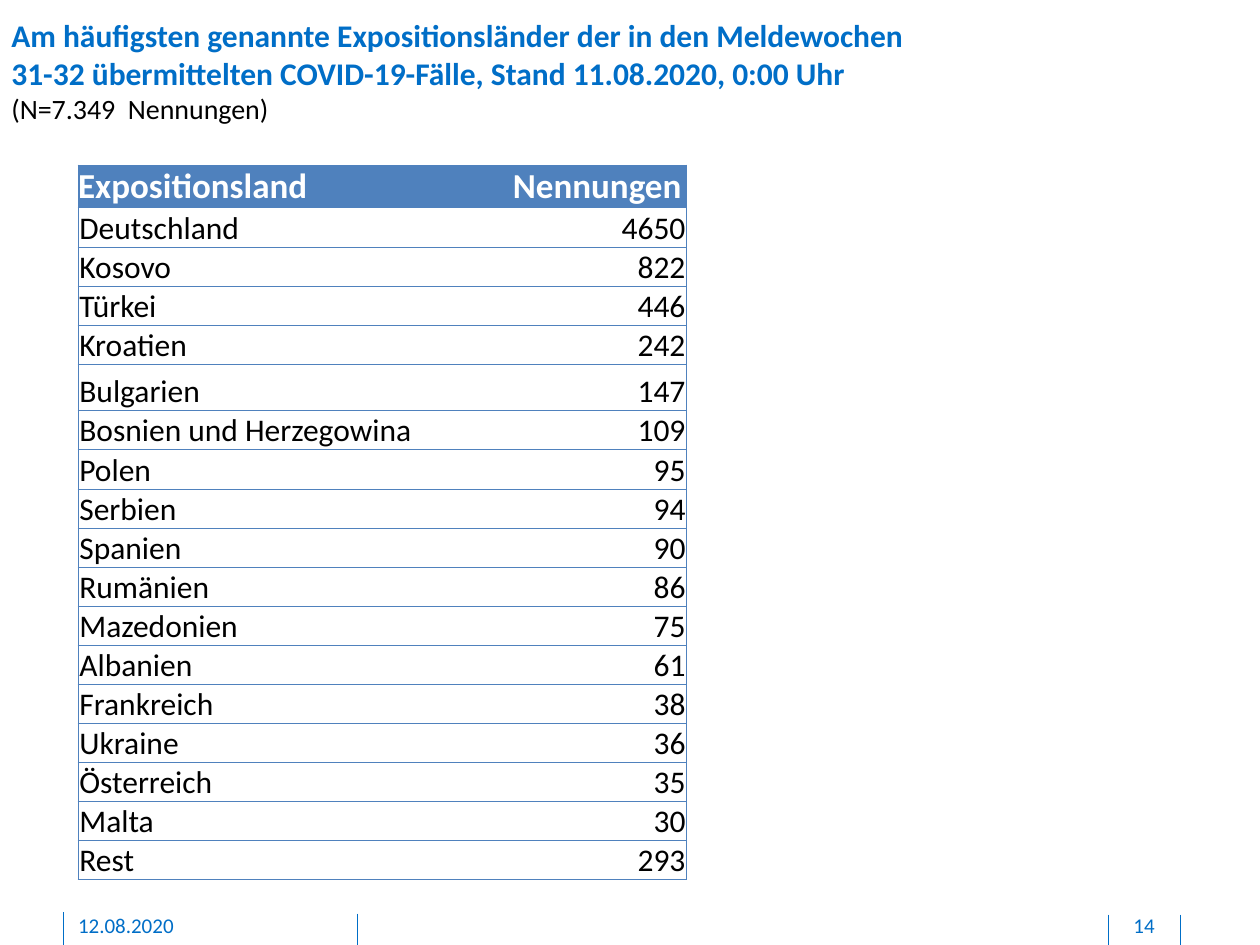
import pptx
import pptx.util
import pptx.dml.color
import pptx.enum.shapes
import pptx.enum.text
import pptx.oxml
import pptx.oxml.ns
import lxml.etree

Inches = pptx.util.Inches
Pt = pptx.util.Pt
ALIGN = pptx.enum.text.PP_ALIGN
ANCHOR = pptx.enum.text.MSO_ANCHOR

TITLE = "Am häufigsten genannte Expositionsländer der in den Meldewochen 31-32 übermittelten COVID-19-Fälle, Stand 11.08.2020, 0:00 Uhr"
SUBTITLE = "(N=7.349  Nennungen)"
HEADER = ("Expositionsland", "Nennungen")
COUNTRIES = [
    ("Deutschland", 4650),
    ("Kosovo", 822),
    ("Türkei", 446),
    ("Kroatien", 242),
    ("Bulgarien", 147),
    ("Bosnien und Herzegowina", 109),
    ("Polen", 95),
    ("Serbien", 94),
    ("Spanien", 90),
    ("Rumänien", 86),
    ("Mazedonien", 75),
    ("Albanien", 61),
    ("Frankreich", 38),
    ("Ukraine", 36),
    ("Österreich", 35),
    ("Malta", 30),
    ("Rest", 293),
]
FOOTERS = [
    ("12.08.2020", 0.62, 2.03, ALIGN.LEFT),
    ("14", 8.81, 0.54, ALIGN.CENTER),
]
FOOTER_RULES = [(0.5, 7.24), (2.84, 7.25), (8.8, 7.26), (9.37, 7.26)]
COLUMN_WIDTHS = (3.45, 1.38)
HEADER_HEIGHT, ROW_HEIGHT, TALL_ROW_HEIGHT = 0.34, 0.31, 0.37
TALL_ROW = "Bulgarien"

THEME = {
    "accent": "006EC7",
    "table": "4F81BD",
    "line": 0.5,
    "title": {"size": 18, "bold": True, "color": "006EC7"},
    "subtitle": {"size": 16, "bold": False, "color": "000000"},
    "header": {"size": 20, "bold": True, "color": "FFFFFF"},
    "body": {"size": 18, "bold": False, "color": "000000"},
    "footer": {"size": 12, "bold": False, "color": "006EC7"},
}


def rgb(value):
    return pptx.dml.color.RGBColor.from_string(value)


def write(para, text, style, align=ALIGN.LEFT):
    para.alignment = align
    span = para.add_run()
    span.text = text
    look = THEME[style]
    formats = {"name": "Calibri", "size": Pt(look["size"]), "bold": look["bold"]}
    for name, value in formats.items():
        setattr(span.font, name, value)
    span.font.color.rgb = rgb(look["color"])


def set_margins(target, left=0, top=0, right=0, bottom=0):
    margins = {"left": left, "top": top, "right": right, "bottom": bottom}
    for side, value in margins.items():
        setattr(target, f"margin_{side}", Inches(value))


def set_borders(cell, sides):
    properties = cell._tc.get_or_add_tcPr()
    namespace = pptx.oxml.ns.nsdecls("a")
    for position, side in enumerate(("L", "R", "T", "B")):
        paint = (
            f'<a:solidFill><a:srgbClr val="{THEME["table"]}"/></a:solidFill>'
            if side in sides else "<a:noFill/>"
        )
        border = pptx.oxml.parse_xml(
            f'<a:ln{side} {namespace} w="{Pt(THEME["line"])}">{paint}</a:ln{side}>'
        )
        properties.insert(position, border)


def add_title(page):
    box = page.shapes.title
    place = {"left": 0.09, "top": 0.13, "width": 7.25, "height": 1.21}
    for name, value in place.items():
        setattr(box, name, Inches(value))
    frame = box.text_frame
    set_margins(frame)
    frame.word_wrap = True
    frame.auto_size = pptx.enum.text.MSO_AUTO_SIZE.NONE
    frame.vertical_anchor = ANCHOR.TOP
    write(frame.paragraphs[0], TITLE, "title")
    write(frame.add_paragraph(), SUBTITLE, "subtitle")


def add_footer(page):
    for left, top in FOOTER_RULES:
        rule = page.shapes.add_connector(
            pptx.enum.shapes.MSO_CONNECTOR.STRAIGHT,
            Inches(left), Inches(top), Inches(left), Inches(7.5),
        )
        rule.line.color.rgb = rgb(THEME["accent"])
        rule.line.width = Pt(THEME["line"])
        lxml.etree.SubElement(rule._element.spPr, pptx.oxml.ns.qn("a:effectLst"))
    for text, left, width, align in FOOTERS:
        box = page.shapes.add_textbox(Inches(left), Inches(7.24), Inches(width), Inches(0.21))
        frame = box.text_frame
        frame.word_wrap = True
        set_margins(frame, bottom=0.05)
        write(frame.paragraphs[0], text, "footer", align)


def add_country_table(page):
    rows = [HEADER] + COUNTRIES
    heights = [HEADER_HEIGHT] + [
        TALL_ROW_HEIGHT if country == TALL_ROW else ROW_HEIGHT for country, _ in COUNTRIES
    ]
    table = page.shapes.add_table(
        len(rows), len(HEADER), Inches(0.62), Inches(1.31),
        Inches(sum(COLUMN_WIDTHS)), Inches(sum(heights)),
    ).table
    for column, width in zip(table.columns, COLUMN_WIDTHS):
        column.width = Inches(width)
    for row_index, (values, height) in enumerate(zip(rows, heights)):
        table.rows[row_index].height = Inches(height)
        is_header = row_index == 0
        for column_index, value in enumerate(values):
            cell = table.cell(row_index, column_index)
            cell.vertical_anchor = ANCHOR.BOTTOM
            inset = 0 if is_header else 0.01
            set_margins(cell, left=inset, top=inset, right=inset)
            if is_header:
                cell.fill.solid()
                cell.fill.fore_color.rgb = rgb(THEME["table"])
            else:
                cell.fill.background()
            set_borders(cell, "LTB" if column_index == 0 else "RTB")
            align = ALIGN.RIGHT if column_index and not is_header else ALIGN.LEFT
            style = "header" if is_header else "body"
            write(cell.text_frame.paragraphs[0], str(value), style, align)


def main():
    deck = pptx.Presentation()
    deck.slide_width, deck.slide_height = Inches(10), Inches(7.5)
    page = deck.slides.add_slide(deck.slide_layouts.get_by_name("Title Only"))
    add_title(page)
    add_footer(page)
    add_country_table(page)
    deck.save("out.pptx")


if __name__ == "__main__":
    main()
